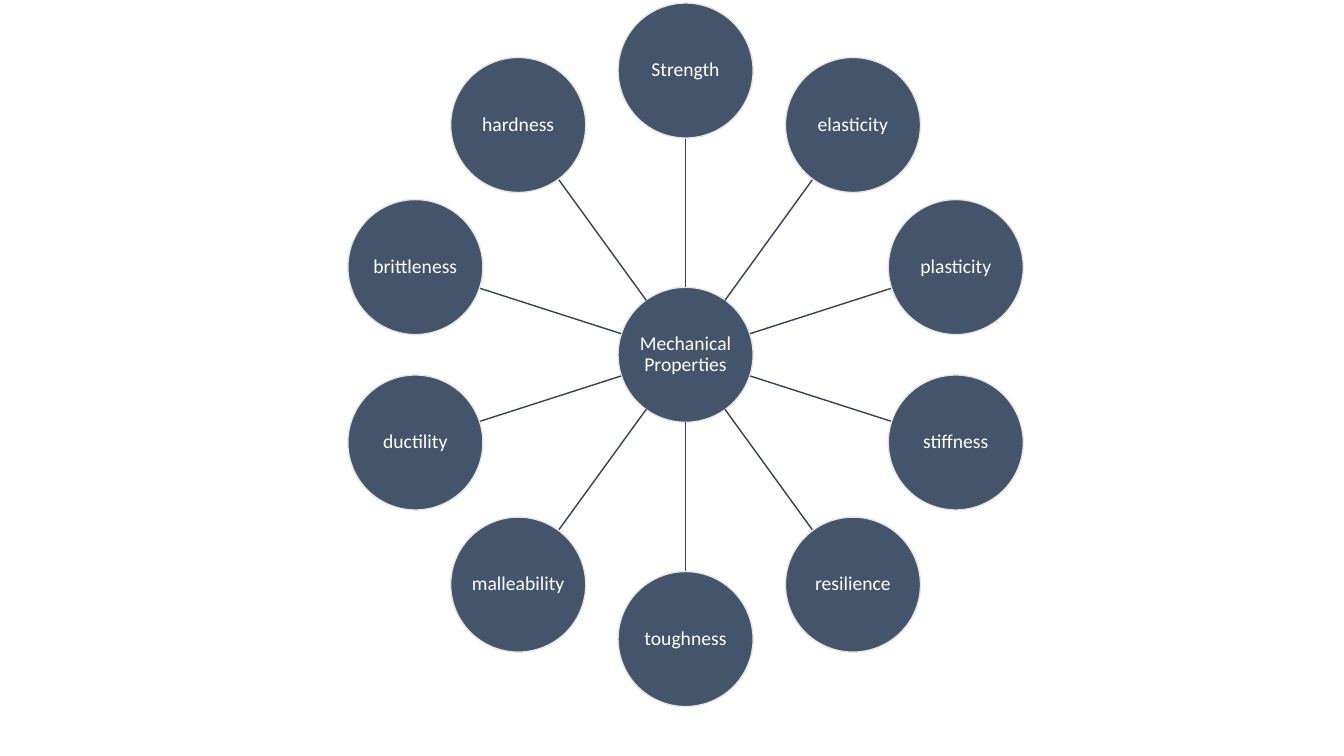
from dataclasses import dataclass
from math import cos, pi, sin

from lxml import etree
from pptx import Presentation
from pptx import util as u
from pptx.dml.color import RGBColor
from pptx.enum import shapes, text
from pptx.oxml.ns import qn
from pptx.slide import Slide

PX = 9144
CENTRE_X, CENTRE_Y = 680, 352
DIAMETER = 134
ORBIT = 282
PROPERTIES = [
    "Strength", "elasticity", "plasticity", "stiffness", "resilience",
    "toughness", "malleability", "ductility", "brittleness", "hardness",
]


@dataclass
class Node:
    label: str
    x: int
    y: int


@dataclass
class Spoke:
    start: tuple[int, int]
    end: tuple[int, int]


def px(length: int) -> u.Emu:
    return u.Emu(length * PX)


def colour(value: str) -> RGBColor:
    return RGBColor.from_string(value)


def point_at(angle: float, radius: float) -> tuple[int, int]:
    return (round(CENTRE_X + radius * sin(angle)),
            round(CENTRE_Y - radius * cos(angle)))


def draw_node(slide: Slide, node: Node) -> None:
    shape = slide.shapes.add_shape(
        shapes.MSO_SHAPE.OVAL,
        px(node.x - DIAMETER // 2), px(node.y - DIAMETER // 2),
        px(DIAMETER), px(DIAMETER))
    shape.shadow.inherit = False
    shape.fill.solid()
    shape.fill.fore_color.rgb = colour("44546A")
    shape.line.color.rgb = colour("E7E6E6")
    shape.line.width = u.Pt(1)
    frame = shape.text_frame
    frame.word_wrap = True
    frame.vertical_anchor = text.MSO_ANCHOR.MIDDLE
    frame.margin_left = frame.margin_right = px(1)
    frame.margin_top = frame.margin_bottom = px(1)
    paragraph = frame.paragraphs[0]
    paragraph.text = node.label
    paragraph.alignment = text.PP_ALIGN.CENTER
    paragraph.line_spacing = 0.9
    paragraph.font.name = "Calibri"
    paragraph.font.size = u.Pt(14)
    paragraph.font.color.rgb = colour("FFFFFF")


def draw_spoke(slide: Slide, spoke: Spoke) -> None:
    connector = slide.shapes.add_connector(
        shapes.MSO_CONNECTOR.STRAIGHT,
        *map(px, spoke.start), *map(px, spoke.end))
    connector.line.color.rgb = colour("354254")
    connector.line.width = u.Pt(1)
    etree.SubElement(connector._element.spPr, qn("a:effectLst"))


def main() -> None:
    presentation = Presentation()
    presentation.slide_width = px(1333)
    presentation.slide_height = px(750)
    slide = presentation.slides.add_slide(presentation.slide_layouts[6])

    draw_node(slide, Node("Mechanical Properties", CENTRE_X, CENTRE_Y))
    for index, label in enumerate(PROPERTIES):
        angle = 2 * pi * index / len(PROPERTIES)
        draw_spoke(slide, Spoke(point_at(angle, DIAMETER / 2),
                                point_at(angle, ORBIT - DIAMETER / 2)))
        draw_node(slide, Node(label, *point_at(angle, ORBIT)))

    presentation.save("out.pptx")


if __name__ == "__main__":
    main()
